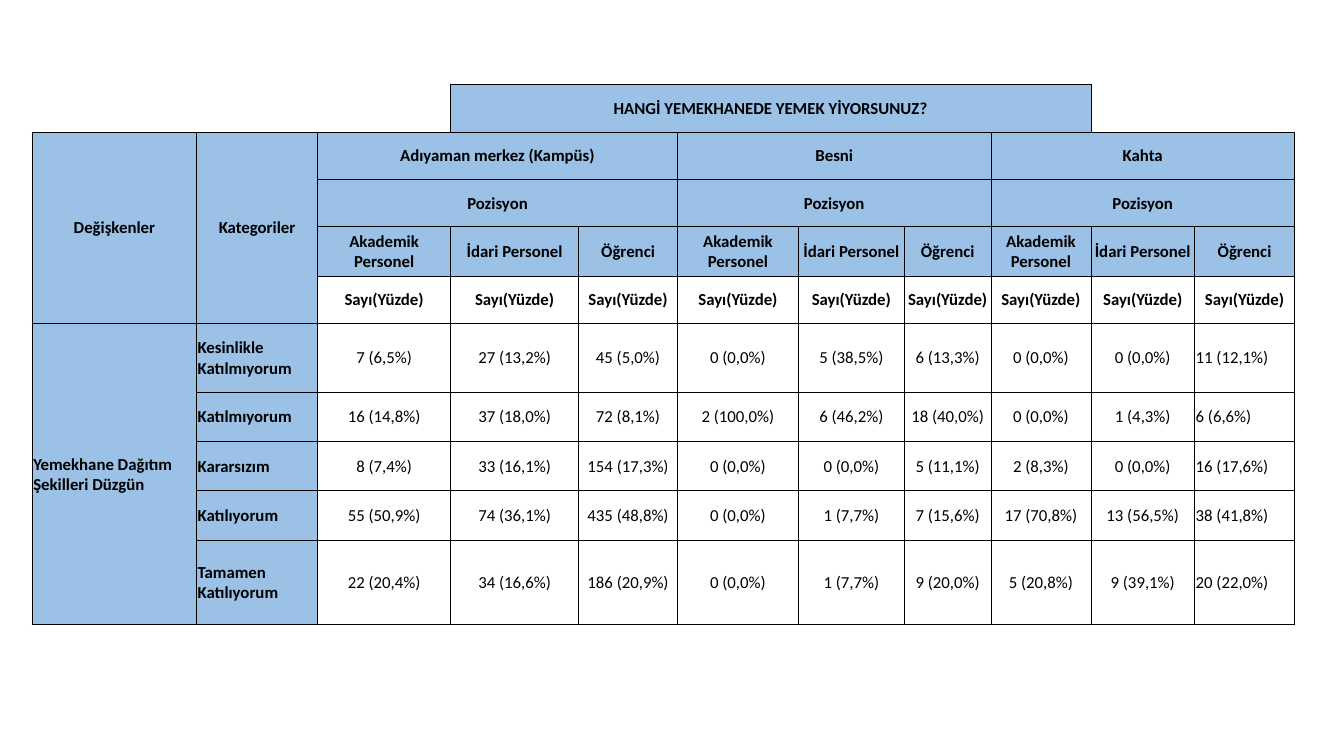
from pptx import Presentation
from pptx.dml.color import RGBColor
from pptx.enum.text import MSO_ANCHOR as ANCHOR, PP_ALIGN as ALIGN
from pptx.oxml.ns import qn
from pptx.util import Inches, Pt
from lxml.etree import SubElement

# Content
QUESTION = "HANGİ YEMEKHANEDE YEMEK YİYORSUNUZ?"
CAMPUSES = ["Adıyaman merkez (Kampüs)", "Besni", "Kahta"]
POSITIONS = ["Akademik Personel", "İdari Personel", "Öğrenci"]
VARIABLE = "Yemekhane Dağıtım Şekilleri Düzgün"
ANSWERS = [
    ("Kesinlikle Katılmıyorum", "7 (6,5%)", "27 (13,2%)", "45 (5,0%)", "0 (0,0%)",
     "5 (38,5%)", "6 (13,3%)", "0 (0,0%)", "0 (0,0%)", "11 (12,1%)"),
    ("Katılmıyorum", "16 (14,8%)", "37 (18,0%)", "72 (8,1%)", "2 (100,0%)",
     "6 (46,2%)", "18 (40,0%)", "0 (0,0%)", "1 (4,3%)", "6 (6,6%)"),
    ("Kararsızım", "8 (7,4%)", "33 (16,1%)", "154 (17,3%)", "0 (0,0%)",
     "0 (0,0%)", "5 (11,1%)", "2 (8,3%)", "0 (0,0%)", "16 (17,6%)"),
    ("Katılıyorum", "55 (50,9%)", "74 (36,1%)", "435 (48,8%)", "0 (0,0%)",
     "1 (7,7%)", "7 (15,6%)", "17 (70,8%)", "13 (56,5%)", "38 (41,8%)"),
    ("Tamamen Katılıyorum", "22 (20,4%)", "34 (16,6%)", "186 (20,9%)", "0 (0,0%)",
     "1 (7,7%)", "9 (20,0%)", "5 (20,8%)", "9 (39,1%)", "20 (22,0%)"),
]
COL_WIDTHS = [1.63, 1.2, 1.32, 1.27, 0.98, 1.2, 1.05, 0.86, 0.99, 1.03, 0.99]
ROW_HEIGHTS = [0.47, 0.47, 0.47, 0.49, 0.47, 0.68, 0.49, 0.49, 0.49, 0.84]
HEADER_ROWS, LABEL_COLS = 5, 2
QUESTION_COLS = range(3, 9)

BLUE = RGBColor(0x9B, 0xC2, 0xE6)
BLACK = RGBColor(0, 0, 0)


def set_borders(cell, sides):
    """Rule the given sides (of L, R, T, B) in black and clear the others."""
    tc_pr = cell._tc.get_or_add_tcPr()
    for side in "LRTB":
        ln = SubElement(tc_pr, qn(f"a:ln{side}"), w=str(Pt(0.5)))
        if side in sides:
            fill = SubElement(ln, qn("a:solidFill"))
            SubElement(fill, qn("a:srgbClr"), val=str(BLACK))
        else:
            SubElement(ln, qn("a:noFill"))


def write(row, col, text, rows=1, cols=1, fill=BLUE, bold=True, align=ALIGN.CENTER):
    cell = table.cell(row, col)
    if rows * cols > 1:
        cell.merge(table.cell(row + rows - 1, col + cols - 1))
    if fill is not None:
        cell.fill.solid()
        cell.fill.fore_color.rgb = fill
    cell.vertical_anchor = ANCHOR.MIDDLE
    cell.margin_left = cell.margin_right = cell.margin_top = Inches(0.01)
    cell.margin_bottom = 0
    p = cell.text_frame.paragraphs[0]
    p.text = text
    p.alignment = align
    p.font.name, p.font.size, p.font.bold = "Calibri", Pt(12), bold
    p.font.color.rgb = BLACK


prs = Presentation()
prs.slide_width, prs.slide_height = Inches(13.33), Inches(7.5)
s = prs.slides.add_slide(prs.slide_layouts[6])

# Table grid
n_rows, n_cols = len(ROW_HEIGHTS), len(COL_WIDTHS)
table = s.shapes.add_table(n_rows, n_cols, Inches(0.32), Inches(0.84),
                           Inches(sum(COL_WIDTHS)), Inches(sum(ROW_HEIGHTS))).table
table.first_row = table.horz_banding = False
for column, width in zip(table.columns, COL_WIDTHS):
    column.width = Inches(width)
for row, height in zip(table.rows, ROW_HEIGHTS):
    row.height = Inches(height)

# Borders: the cells beside the question only touch the ruled area
for r in range(n_rows):
    for c in range(n_cols):
        sides = "LRTB"
        if r == 0 and c not in QUESTION_COLS:
            sides = "B"
            if c + 1 == QUESTION_COLS.start:
                sides += "R"
            if c == QUESTION_COLS.stop:
                sides += "L"
        set_borders(table.cell(r, c), sides)
        table.cell(r, c).fill.background()

# Headers
write(0, QUESTION_COLS.start, QUESTION, cols=len(QUESTION_COLS))
for c, label in enumerate(["Değişkenler", "Kategoriler"]):
    write(1, c, label, rows=HEADER_ROWS - 1)
for i, campus in enumerate(CAMPUSES):
    first = LABEL_COLS + i * len(POSITIONS)
    write(1, first, campus, cols=len(POSITIONS))
    write(2, first, "Pozisyon", cols=len(POSITIONS))
    for c, position in enumerate(POSITIONS, first):
        write(3, c, position)
        write(4, c, "Sayı(Yüzde)", fill=None)

# Answers: the last column is left-aligned
write(HEADER_ROWS, 0, VARIABLE, rows=len(ANSWERS), align=ALIGN.LEFT)
for r, (category, *values) in enumerate(ANSWERS, HEADER_ROWS):
    write(r, 1, category, align=ALIGN.LEFT)
    for c, value in enumerate(values, LABEL_COLS):
        align = ALIGN.LEFT if c == n_cols - 1 else ALIGN.CENTER
        write(r, c, value, fill=None, bold=False, align=align)

prs.save("out.pptx")
